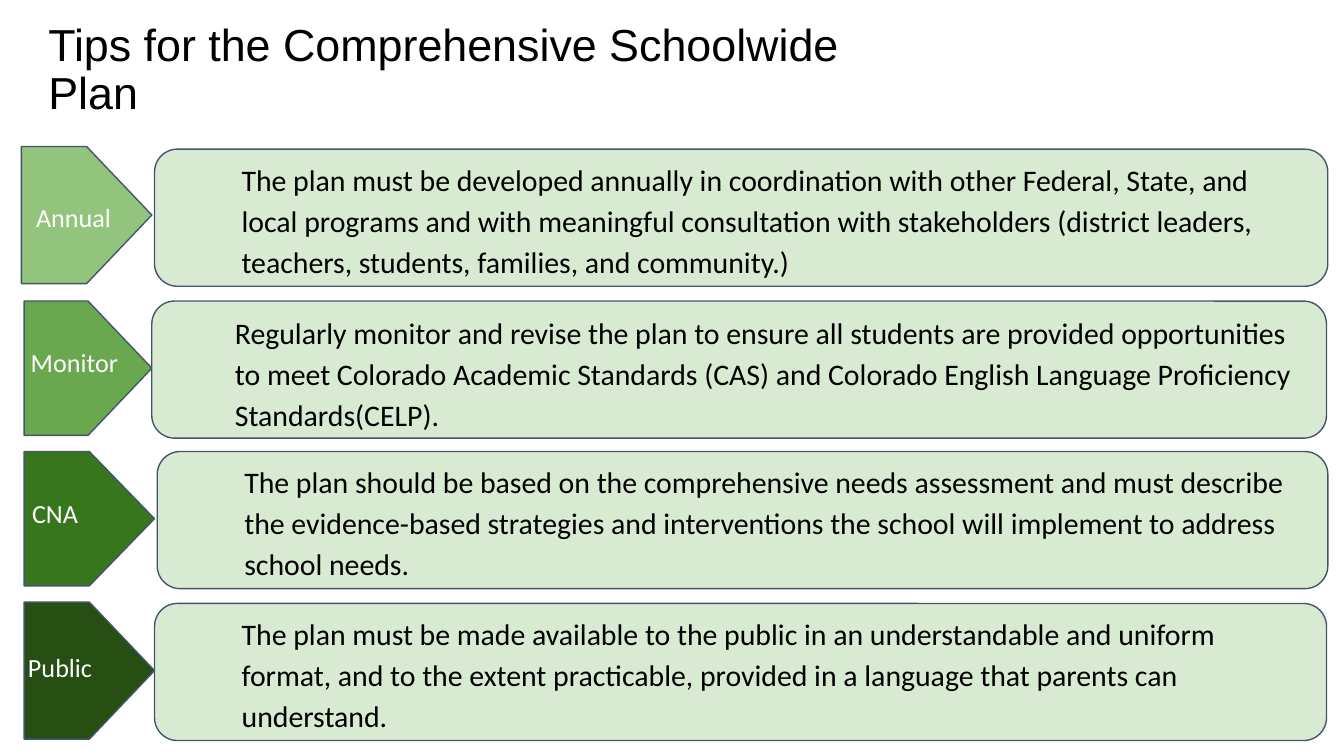
from pptx import Presentation
from pptx.dml.color import RGBColor
from pptx.enum.shapes import MSO_SHAPE
from pptx.enum.text import MSO_ANCHOR, PP_ALIGN
from pptx.util import Inches, Pt

# Content: label, tag colour, tag box, label box, card box, text
TITLE = "Tips for the Comprehensive Schoolwide Plan"
TIPS = [
    ("Annual", "light", (0.16, 1.09, 0.97, 1.02), (0.17, 1.4, 0.91, 0.44),
     (1.15, 1.11, 8.73, 1.02),
     "The plan must be developed annually in coordination with other Federal, "
     "State, and local programs and with meaningful consultation with "
     "stakeholders (district leaders, teachers, students, families, and community.)"),
    ("Monitor", "medium", (0.18, 2.24, 0.95, 1), (0.13, 2.48, 1.01, 0.44),
     (1.13, 2.24, 8.74, 1.02),
     "Regularly monitor and revise the plan to ensure all students are provided "
     "opportunities to meet Colorado Academic Standards (CAS) and Colorado "
     "English Language Proficiency Standards(CELP)."),
    ("CNA", "dark", (0.18, 3.36, 0.97, 1), (0.14, 3.6, 0.87, 0.44),
     (1.17, 3.36, 8.71, 1.02),
     "The plan should be based on the comprehensive needs assessment and must "
     "describe the evidence-based strategies and interventions the school will "
     "implement to address school needs."),
    ("Public", "deep", (0.18, 4.48, 0.97, 1.02), (0.11, 4.75, 0.95, 0.44),
     (1.15, 4.49, 8.72, 1.02),
     "The plan must be made available to the public in an understandable and "
     "uniform format, and to the extent practicable, provided in a language "
     "that parents can understand."),
]
# Tips whose text sits in its own box over the card
TEXT_BOXES = {"Monitor": (1.15, 2.2, 8.73, 1.3)}

COLORS = {"light": "93C47D", "medium": "6AA84F", "dark": "38761D",
          "deep": "274E13", "card": "D9EAD3", "line": "44546A",
          "black": "000000", "white": "FFFFFF"}
TITLE_FONT = {"name": "Arial", "size": Pt(24)}
LABEL_FONT = {"name": "Calibri", "size": Pt(14)}
BODY_FONT = {"name": "Calibri", "size": Pt(16)}


def rgb(name):
    return RGBColor.from_string(COLORS[name])


def add_block(s, kind, box, fill, adj):
    sp = s.shapes.add_shape(kind, *map(Inches, box))
    sp.adjustments[0] = adj
    sp.shadow.inherit = False
    sp.fill.solid()
    sp.fill.fore_color.rgb = rgb(fill)
    sp.line.color.rgb = rgb("line")
    sp.line.width = Pt(0.75)
    return sp


def add_box(s, box):
    return s.shapes.add_textbox(*map(Inches, box))


def set_text(sp, text, font, color, spacing=1.0, inset=0.1, indent=0,
             anchor=MSO_ANCHOR.TOP):
    tf = sp.text_frame
    tf.word_wrap = True
    tf.vertical_anchor = anchor
    for side in ("left", "top", "right", "bottom"):
        setattr(tf, f"margin_{side}", Inches(inset))
    p = tf.paragraphs[0]
    p.alignment = PP_ALIGN.LEFT
    p.line_spacing = spacing
    if indent:
        pPr = p._p.get_or_add_pPr()
        pPr.set("marL", str(Inches(indent)))
        pPr.set("indent", "0")
    r = p.add_run()
    r.text = text
    for key, value in font.items():
        setattr(r.font, key, value)
    r.font.color.rgb = rgb(color)


# 16:9 slide
prs = Presentation()
prs.slide_width = Inches(10)
prs.slide_height = prs.slide_width * 9 // 16
s = prs.slides.add_slide(prs.slide_layouts[6])

# Title
set_text(add_box(s, (0.36, 0.16, 6.62, 0.74)), TITLE, TITLE_FONT, "black",
         spacing=0.9, inset=0, anchor=MSO_ANCHOR.MIDDLE)

# Tips: arrow tag, its label, and the card with the text
for label, color, tag_box, label_box, card_box, text in TIPS:
    add_block(s, MSO_SHAPE.PENTAGON, tag_box, color, 0.5)
    set_text(add_box(s, label_box), label, LABEL_FONT, "white")
    card = add_block(s, MSO_SHAPE.ROUNDED_RECTANGLE, card_box, "card", 0.167)
    if label in TEXT_BOXES:
        holder, anchor = add_box(s, TEXT_BOXES[label]), MSO_ANCHOR.TOP
    else:
        holder, anchor = card, MSO_ANCHOR.MIDDLE
    set_text(holder, text, BODY_FONT, "black", spacing=1.15, indent=0.5,
             anchor=anchor)

prs.save("out.pptx")
